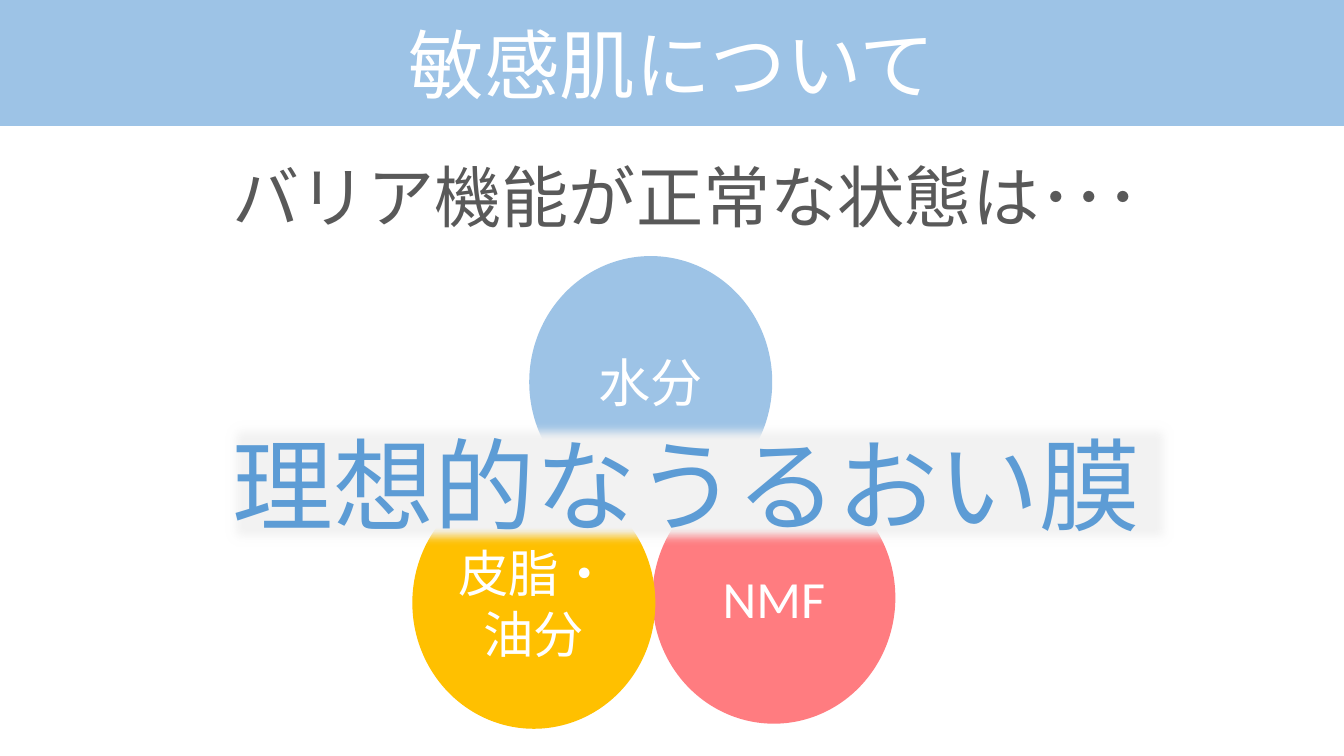
from dataclasses import dataclass

from lxml.etree import SubElement
from pptx import Presentation
from pptx.dml.color import RGBColor
from pptx.enum.shapes import MSO_SHAPE as Preset
from pptx.enum.text import MSO_ANCHOR as Anchor, PP_ALIGN as Align
from pptx.oxml.ns import qn
from pptx.util import Inches, Pt


@dataclass(frozen=True)
class Theme:
    sky: str = "9DC3E6"
    rose: str = "FF7C80"
    amber: str = "FFC000"
    mist: str = "F2F2F2"
    blue: str = "5D9CD5"
    grey: str = "595959"
    white: str = "FFFFFF"
    sans: str = "Noto Sans CJK JP"
    circle_font: str = "Calibri"
    banner_size: float = 54
    lead_size: float = 48
    circle_size: float = 37.3
    small_circle_size: float = 36
    message_size: float = 72
    soft_edge: float = 0.12


class Page:
    """One slide; positions and sizes are percentages of the slide."""

    def __init__(self, deck, theme):
        self.deck, self.theme = deck, theme
        self.slide = deck.slides.add_slide(deck.slide_layouts[6])

    def area(self, left, top, width, height):
        across, down = self.deck.slide_width / 100, self.deck.slide_height / 100
        return (round(left * across), round(top * down),
                round(width * across), round(height * down))

    def set_text(self, box, text, size, color, font, align, anchor):
        frame = box.text_frame
        frame.word_wrap = True
        frame.vertical_anchor = anchor
        frame.text = text
        para = frame.paragraphs[0]
        para.alignment = align
        span = para.runs[0]
        span.font.size = Pt(size)
        span.font.name = font
        span.font.color.rgb = RGBColor.from_string(color)
        # Japanese glyphs use the East Asian typeface
        SubElement(span.font._element, qn("a:ea"), typeface=font)

    def shape(self, preset, area, fill):
        box = self.slide.shapes.add_shape(preset, *self.area(*area))
        box.shadow.inherit = False
        box.fill.solid()
        box.fill.fore_color.rgb = RGBColor.from_string(fill)
        box.line.fill.background()
        return box

    def banner(self, text, height):
        box = self.shape(Preset.RECTANGLE, (0, 0, 100, height), self.theme.sky)
        self.set_text(box, text, self.theme.banner_size, self.theme.white,
                      self.theme.sans, Align.CENTER, Anchor.MIDDLE)

    def lead(self, text, area):
        box = self.slide.shapes.add_textbox(*self.area(*area))
        self.set_text(box, text, self.theme.lead_size, self.theme.grey,
                      self.theme.sans, Align.LEFT, Anchor.TOP)

    def circle(self, text, left, top, fill, size):
        box = self.shape(Preset.OVAL, (left, top, 18.08, 33.33), fill)
        self.set_text(box, text, size, self.theme.white,
                      self.theme.circle_font, Align.CENTER, Anchor.MIDDLE)

    def message(self, text, area):
        box = self.shape(Preset.RECTANGLE, area, self.theme.mist)
        effects = box._element.spPr.find(qn("a:effectLst"))
        SubElement(effects, qn("a:softEdge"), rad=str(Inches(self.theme.soft_edge)))
        self.set_text(box, text, self.theme.message_size, self.theme.blue,
                      self.theme.sans, Align.LEFT, Anchor.TOP)


def main():
    deck = Presentation()
    deck.slide_width, deck.slide_height = Inches(13.33), Inches(7.5)
    theme = Theme()
    page = Page(deck, theme)
    text_left, text_width = 16.58, 70.97

    # Lead-in line
    page.lead("バリア機能が正常な状態は･･･", (text_left, 19.87, text_width, 12.13))

    # Three components of the skin barrier
    for text, left, top, fill, size in (
        ("水分", 39.38, 33.87, theme.sky, theme.circle_size),
        ("NMF", 48.54, 62.4, theme.rose, theme.circle_size),
        ("皮脂・油分", 30.68, 63.07, theme.amber, theme.small_circle_size),
    ):
        page.circle(text, left, top, fill, size)

    # Soft-edged message across the circles
    page.message("理想的なうるおい膜", (text_left, 55.2, text_width, 17.47))

    # Title banner
    page.banner("敏感肌について", 16.67)

    deck.save("out.pptx")


if __name__ == "__main__":
    main()
